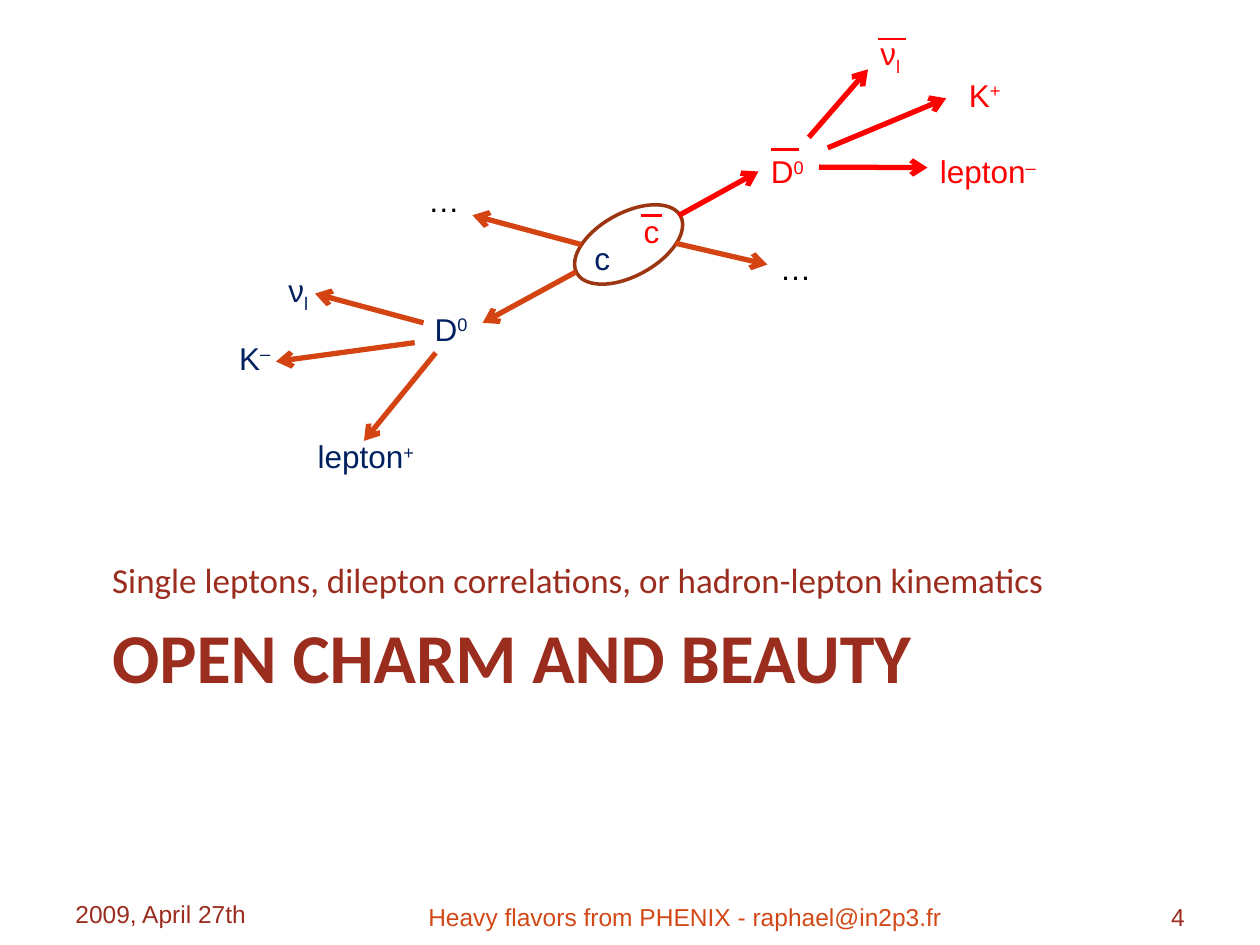
from dataclasses import dataclass

from pptx import Presentation
from pptx.dml.color import RGBColor
from pptx.enum.shapes import MSO_CONNECTOR, MSO_SHAPE
from pptx.enum.text import MSO_ANCHOR, MSO_AUTO_SIZE, PP_ALIGN
from pptx.oxml.ns import qn
from pptx.util import Pt
from lxml.etree import SubElement


@dataclass(frozen=True)
class Theme:
    brown: RGBColor = RGBColor(0x9B, 0x2D, 0x1F)
    orange: RGBColor = RGBColor(0xD3, 0x48, 0x17)
    arrow: RGBColor = RGBColor(0xD3, 0x44, 0x12)
    outline: RGBColor = RGBColor(0x9C, 0x35, 0x11)
    navy: RGBColor = RGBColor(0x00, 0x20, 0x60)
    red: RGBColor = RGBColor(0xFF, 0x00, 0x00)
    black: RGBColor = RGBColor(0x00, 0x00, 0x00)
    heading_font: str = "Calibri"
    label_font: str = "Arial"
    title_size: int = 40
    body_size: int = 20
    label_size: int = 18
    footer_size: int = 14


T = Theme()
LABEL_H = 29
SUPER, SUB = 30000, -25000


def style(r, font, size, color, bold=False):
    r.font.name, r.font.size, r.font.bold = font, Pt(size), bold
    r.font.color.rgb = color


def place(sp, left, top, width, height):
    sp.left, sp.top, sp.width, sp.height = map(Pt, (left, top, width, height))


def add_heading(sp, text, box, anchor, size, bold=False):
    place(sp, *box)
    tf = sp.text_frame
    tf.text = text
    tf.vertical_anchor = anchor
    p = tf.paragraphs[0]
    p.alignment, p.space_before = PP_ALIGN.LEFT, Pt(0)
    style(p.runs[0], T.heading_font, size, T.brown, bold)


def add_footer(shapes, text, box, align, color):
    sp = shapes.add_textbox(*map(Pt, box))
    tf = sp.text_frame
    tf.word_wrap = True
    tf.text = text
    p = tf.paragraphs[0]
    p.alignment = align
    style(p.runs[0], T.label_font, T.footer_size, color)


def add_label(shapes, text, left, top, width, color, script="", shift=SUPER):
    """Particle name with an optional superscript or subscript."""
    sp = shapes.add_textbox(*map(Pt, (left, top, width, LABEL_H)))
    tf = sp.text_frame
    tf.word_wrap = False
    tf.auto_size = MSO_AUTO_SIZE.SHAPE_TO_FIT_TEXT
    tf.text = text
    p = tf.paragraphs[0]
    if script:
        p.add_run().text = script
    for r in p.runs:
        style(r, T.label_font, T.label_size, color)
    if script:
        p.runs[1].font._element.set("baseline", str(shift))
    return sp


def add_line(shapes, x1, y1, x2, y2, color, width, arrow=False):
    line = shapes.add_connector(MSO_CONNECTOR.STRAIGHT, *map(Pt, (x1, y1, x2, y2)))
    line.line.color.rgb = color
    line.line.width = Pt(width)
    if arrow:
        SubElement(line.line._get_or_add_ln(), qn("a:tailEnd"), type="arrow")
    SubElement(line._element.spPr, qn("a:effectLst"))
    return line


def add_antiparticle(shapes, bar, *label):
    """Red label grouped with the bar above it."""
    group = shapes.add_group_shape()
    sp = add_label(group.shapes, *label)
    add_line(group.shapes, *bar, T.red, 1.5)
    return sp


def main():
    prs = Presentation()
    prs.slide_width, prs.slide_height = Pt(720), Pt(540)
    s = prs.slides.add_slide(prs.slide_layouts[2])
    shapes = s.shapes

    # Section title and subtitle
    add_heading(shapes.title, "OPEN CHARM AND BEAUTY", (56.9, 347, 612, 107.3),
                MSO_ANCHOR.TOP, T.title_size, True)
    add_heading(s.placeholders[1],
                "Single leptons, dilepton correlations, or hadron-lepton kinematics",
                (56.9, 229, 612, 118), MSO_ANCHOR.BOTTOM, T.body_size)

    # Footer
    for footer in (
        ("2009, April 27th", (36, 510, 168, 21), PP_ALIGN.LEFT, T.brown),
        ("Heavy flavors from PHENIX - raphael@in2p3.fr", (180, 512, 423, 32),
         PP_ALIGN.CENTER, T.orange),
        ("4", (516, 512, 168, 21), PP_ALIGN.RIGHT, T.brown),
    ):
        add_footer(shapes, *footer)

    # Particle labels
    for label in (
        ("c", 332.6, 133.2, 24, T.navy),
        ("D", 241.2, 173.5, 34.5, T.navy, "0"),
        ("ν", 157.7, 151.2, 26.5, T.navy, "l", SUB),
        ("K", 129.6, 190, 33, T.navy, "–"),
        ("lepton", 174.4, 246.2, 71, T.navy, "+"),
        ("K", 546.5, 39.6, 34, T.red, "+"),
        ("lepton", 530, 83.5, 70.5, T.red, "–"),
        ("…", 438.5, 139, 32.4, T.black),
        ("…", 237.6, 100, 32.4, T.black),
    ):
        add_label(shapes, *label)

    # Barred antiparticles
    anti_d = add_antiparticle(shapes, (440.6, 85.3, 456.5, 85.3),
                              "D", 433.4, 83.5, 34.5, T.red, "0")
    add_antiparticle(shapes, (501.5, 22.3, 517.5, 22.3),
                     "ν", 496, 15.8, 26.5, T.red, "l", SUB)
    add_antiparticle(shapes, (366.5, 123, 378, 123), "c", 360.7, 117.4, 24, T.red)

    # Charm pair outline
    pair = shapes.add_shape(MSO_SHAPE.OVAL, *map(Pt, (325.4, 121.7, 67.7, 36)))
    pair.rotation = 331.2
    pair.shadow.inherit = False
    pair.fill.background()
    pair.line.color.rgb = T.outline
    pair.line.width = Pt(2)

    # Decay arrows
    for ends in (
        (462.2, 78.5, 496, 39.6),
        (473, 84.5, 540.7, 56.2),
        (468, 95.5, 530, 95.8),
    ):
        add_line(shapes, *ends, T.red, 3, arrow=True)
    to_anti_d = add_line(shapes, 388, 123.1, 433.4, 98, T.red, 3, arrow=True)
    to_anti_d.end_connect(anti_d, 1)
    for ends in (
        (386, 139, 438.5, 151.2),
        (332, 139.7, 270, 123),
        (329, 155.5, 275.8, 184.5),
        (242, 184.5, 180, 167.8),
        (237, 195.8, 157.7, 206.6),
        (249, 201.6, 208, 252),
    ):
        add_line(shapes, *ends, T.arrow, 3, arrow=True)

    prs.save("out.pptx")


if __name__ == "__main__":
    main()
